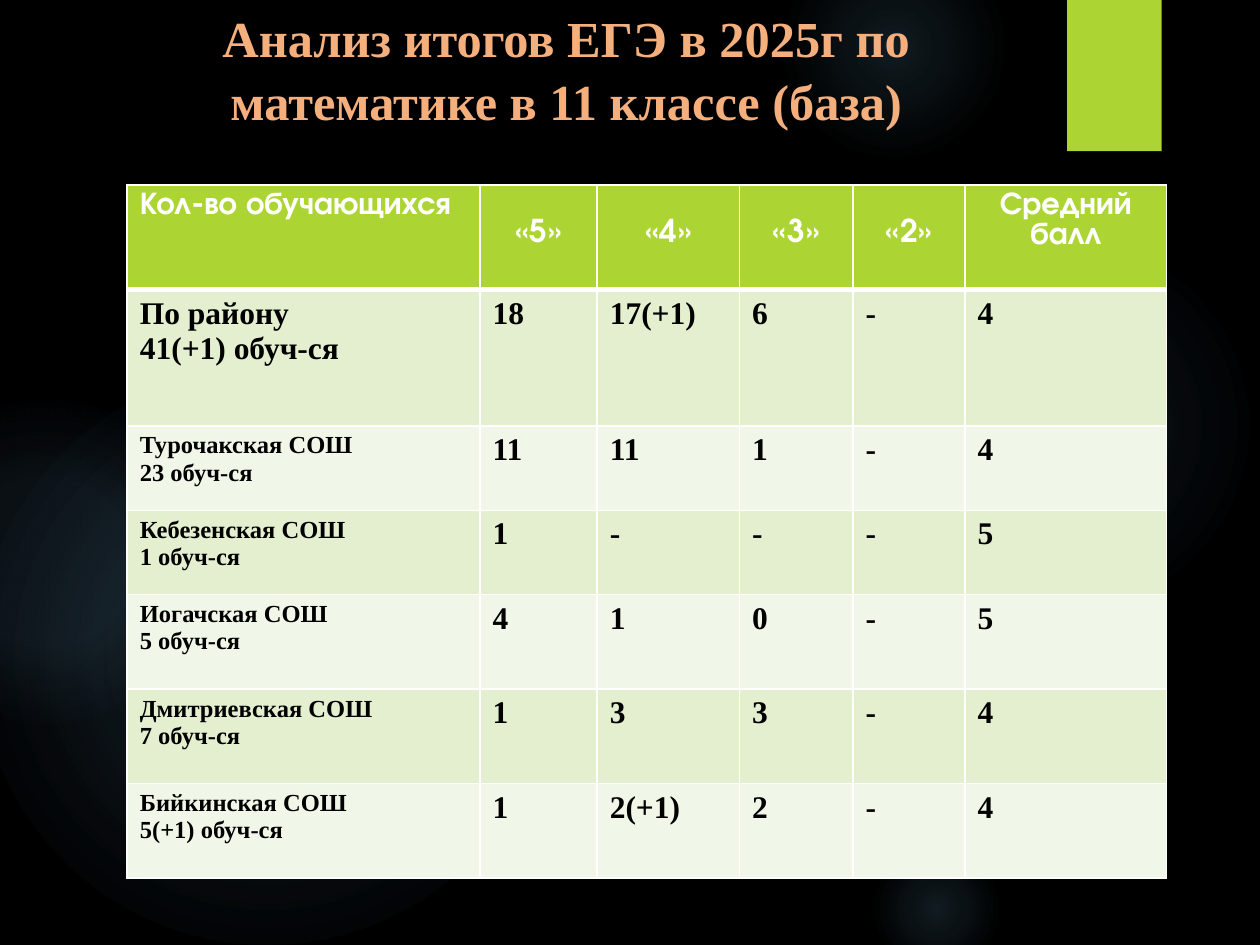
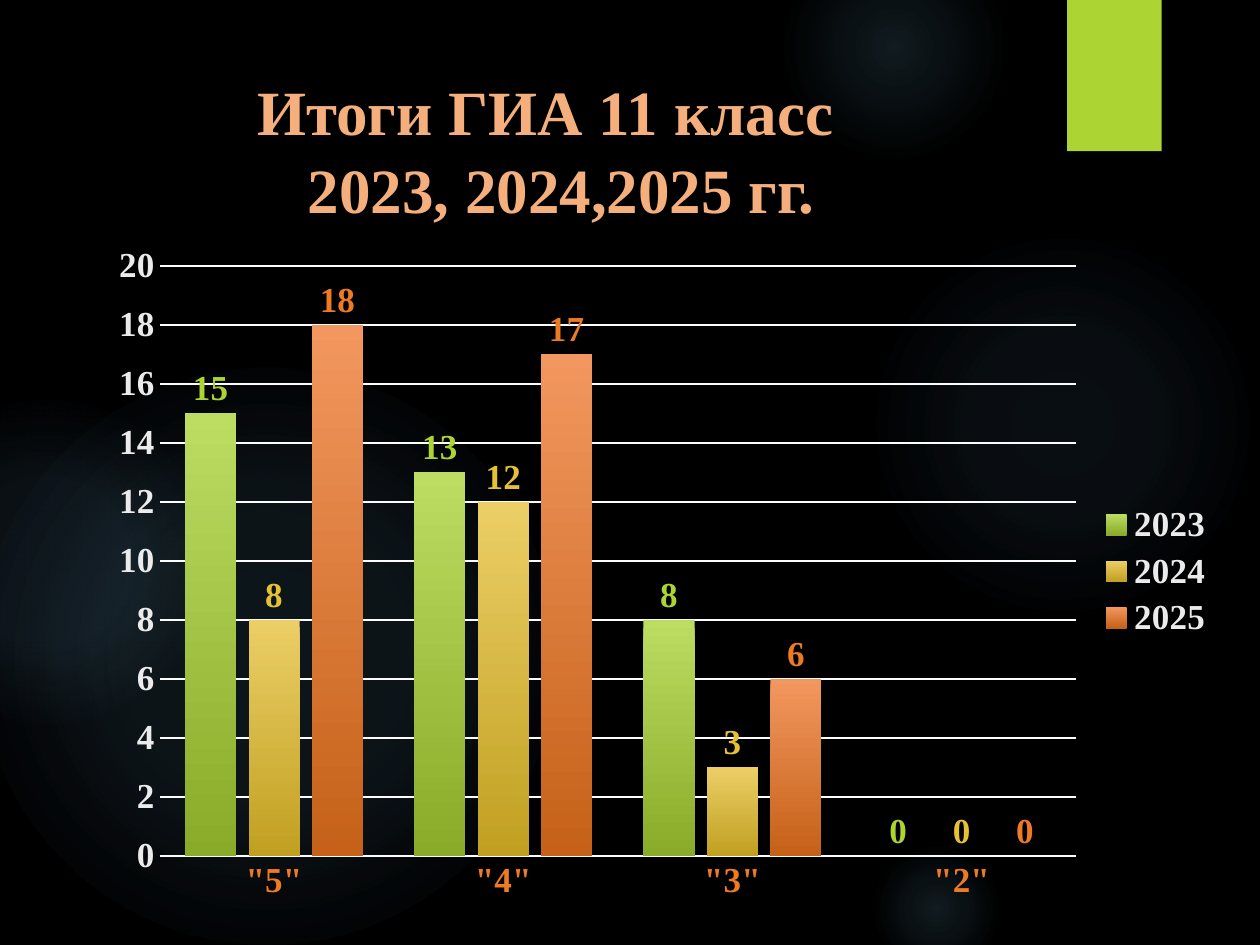
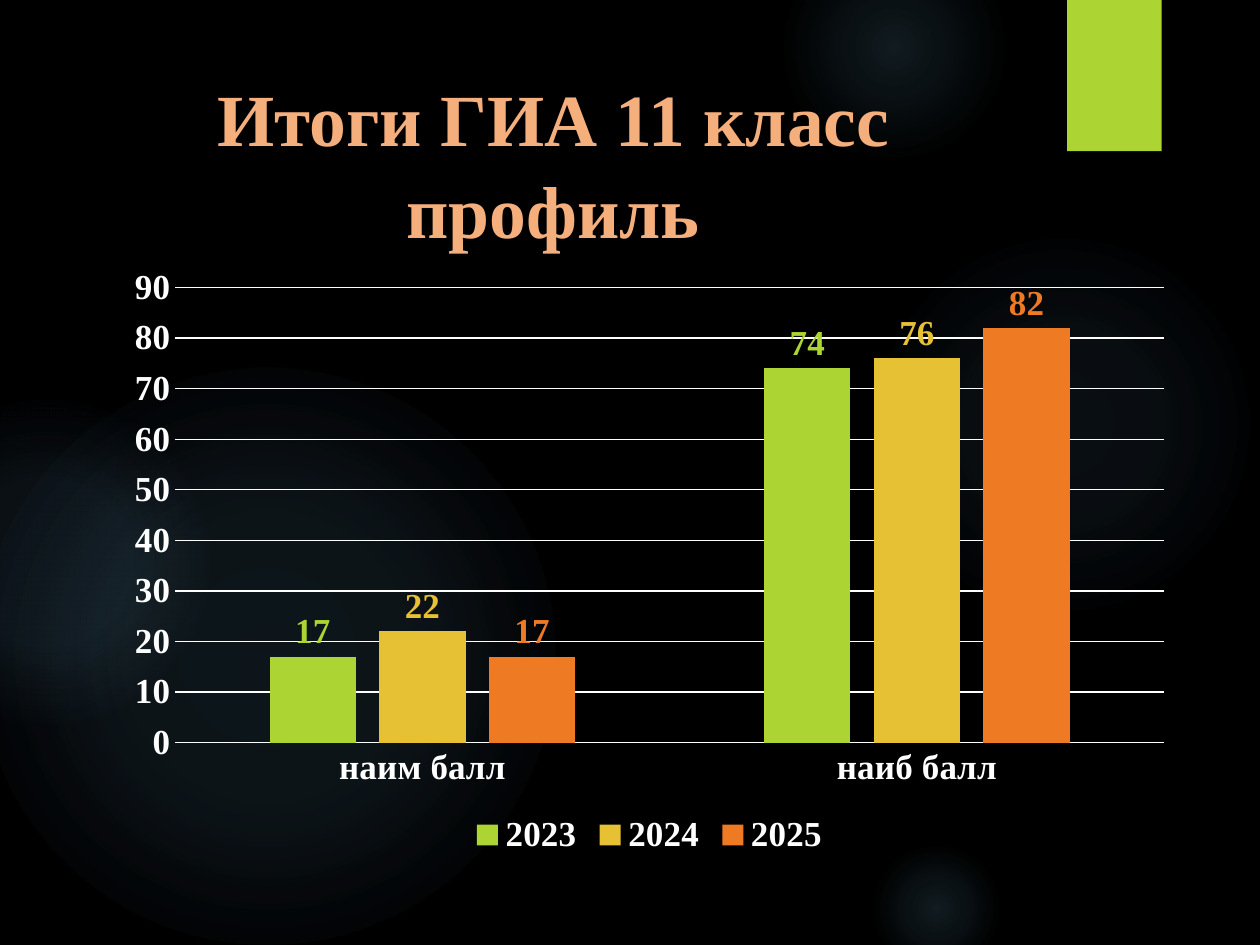
import pptx
import pptx.chart.data
import pptx.dml.color
import pptx.enum.chart
import pptx.enum.shapes
import pptx.enum.text
import pptx.oxml
import pptx.oxml.ns
import pptx.util

RGBColor = pptx.dml.color.RGBColor
BLACK = RGBColor(0x00, 0x00, 0x00)
WHITE = RGBColor(0xFF, 0xFF, 0xFF)
SOFT_WHITE = RGBColor(0xEB, 0xEB, 0xEB)
GRID_WHITE = RGBColor(0xFC, 0xFC, 0xFC)
PEACH = RGBColor(0xF5, 0xAF, 0x7C)
GLOW_BLUE = RGBColor(0x7A, 0xC4, 0xF0)
LIME = RGBColor(0xAC, 0xD4, 0x33)
GOLD = RGBColor(0xE6, 0xC1, 0x33)
ORANGE = RGBColor(0xEF, 0x7A, 0x24)
BAND_COLORS = (RGBColor(0xF1, 0xF7, 0xE8), RGBColor(0xE3, 0xEF, 0xCE))
SERIES_COLORS = (LIME, GOLD, ORANGE)
SERIES_GRADIENTS = (
    (RGBColor(0xBC, 0xDC, 0x62), RGBColor(0x8A, 0xAA, 0x29)),
    (RGBColor(0xEB, 0xCE, 0x66), RGBColor(0xC1, 0xA0, 0x21)),
    (RGBColor(0xF2, 0x97, 0x5F), RGBColor(0xC5, 0x61, 0x18)),
)

BODY_FONT = "Times New Roman"
HEADER_FONT = "TeX Gyre Adventor"
YEARS = ("2023", "2024", "2025")

SLIDE_WIDTH = pptx.util.Inches(10)
SLIDE_HEIGHT = pptx.util.Inches(7.5)
CELL = SLIDE_WIDTH / 100

GLOWS = (
    (68.9, 18.3, 30.8, ((0, 7), (36, 6), (69, 0))),
    (62.2, -5, 17.5, ((0, 14), (36, 7), (73, 0))),
    (68.9, 66.7, 10.8, ((0, 14), (36, 7), (66, 0))),
    (-1.7, 29.2, 45.8, ((0, 11), (36, 10), (75, 0))),
    (-9.2, 31.7, 25.8, ((0, 8), (36, 8), (72, 0))),
)
TITLE_BOX = (5.3, 5, 77.2, 15.3)

COLUMN_WIDTHS = (28, 9.3, 11.3, 9, 8.9, 16)
ROW_HEIGHTS = (8.3, 10.8, 6.7, 6.7, 7.5, 7.5, 7.5)
HEADER = ("Кол-во обучающихся", "«5»", "«4»", "«3»", "«2»", "Средний балл")
RESULTS = (
    ("По району\n41(+1) обуч-ся", "18", "17(+1)", "6", "-", "4"),
    ("Турочакская СОШ\n23 обуч-ся", "11", "11", "1", "-", "4"),
    ("Кебезенская СОШ\n1 обуч-ся", "1", "-", "-", "-", "5"),
    ("Иогачская СОШ\n5 обуч-ся", "4", "1", "0", "-", "5"),
    ("Дмитриевская СОШ\n7 обуч-ся", "1", "3", "3", "-", "4"),
    ("Бийкинская СОШ\n5(+1) обуч-ся", "1", "2(+1)", "2", "-", "4"),
)


def grid(*cells):
    return [pptx.util.Emu(round(cell * CELL)) for cell in cells]


def drawing_xml(tag, attributes="", content=""):
    namespace = pptx.oxml.ns.nsdecls("a")
    return pptx.oxml.parse_xml(f"<a:{tag} {namespace} {attributes}>{content}</a:{tag}>")


def format_font(font, size=20, color=WHITE, name=BODY_FONT):
    font.size = pptx.util.Pt(size)
    font.bold = True
    font.name = name
    font.color.rgb = color


def write_text(frame, text, align=None, line_spacing=None, **font_format):
    frame.text = text
    for paragraph in frame.paragraphs:
        paragraph.alignment = align
        paragraph.line_spacing = line_spacing
        for run in paragraph.runs:
            format_font(run.font, **font_format)


def add_plain_shape(slide, kind, box, color):
    shape = slide.shapes.add_shape(kind, *grid(*box))
    shape.shadow.inherit = False
    shape.fill.solid()
    shape.fill.fore_color.rgb = color
    shape.line.fill.background()
    return shape


def add_glow(slide, left, top, diameter, stops):
    shape = add_plain_shape(slide, pptx.enum.shapes.MSO_SHAPE.OVAL,
                            (left, top, diameter, diameter), GLOW_BLUE)
    stop_xml = "".join(
        f'<a:gs pos="{position * 1000}"><a:srgbClr val="{GLOW_BLUE}">'
        f'<a:alpha val="{alpha * 1000}"/></a:srgbClr></a:gs>'
        for position, alpha in stops)
    gradient = drawing_xml(
        "gradFill", 'rotWithShape="1"',
        f'<a:gsLst>{stop_xml}</a:gsLst><a:path path="circle">'
        '<a:fillToRect l="50000" t="50000" r="50000" b="50000"/></a:path>')
    solid = shape.element.spPr.find(pptx.oxml.ns.qn("a:solidFill"))
    solid.getparent().replace(solid, gradient)
    return shape


def add_tab(slide):
    tab = add_plain_shape(slide, pptx.enum.shapes.MSO_SHAPE.RECTANGLE,
                          (84.7, 0, 7.5, 12), LIME)
    effects = tab.element.spPr.find(pptx.oxml.ns.qn("a:effectLst"))
    effects.append(drawing_xml(
        "outerShdw",
        f'blurRad="{pptx.util.Pt(3)}" dist="{pptx.util.Pt(2)}" dir="5400000" rotWithShape="0"',
        f'<a:srgbClr val="{BLACK}"><a:alpha val="45000"/></a:srgbClr>'))
    return tab


def build_backdrop(presentation, slide):
    master = presentation.slide_master
    master.background.fill.solid()
    master.background.fill.fore_color.rgb = BLACK
    first_placeholder = master.shapes[0].element
    shapes = [add_glow(slide, *glow) for glow in GLOWS] + [add_tab(slide)]
    for number, shape in enumerate(shapes, start=100):
        shape.element.nvSpPr.cNvPr.set("id", str(number))
        first_placeholder.addprevious(shape.element)


def set_title(slide, text, size, box=TITLE_BOX):
    title = slide.shapes.title
    title.left, title.top, title.width, title.height = grid(*box)
    frame = title.text_frame
    frame.word_wrap = True
    frame.auto_size = pptx.enum.text.MSO_AUTO_SIZE.NONE
    frame.vertical_anchor = pptx.enum.text.MSO_ANCHOR.TOP
    write_text(frame, text, align=pptx.enum.text.PP_ALIGN.CENTER,
               line_spacing=1.04, size=size, color=PEACH)


def set_borders(cell, top=1, bottom=1):
    properties = cell._tc.get_or_add_tcPr()
    for side, width in (("L", 1), ("R", 1), ("T", top), ("B", bottom)):
        properties.append(drawing_xml(
            f"ln{side}", f'w="{pptx.util.Pt(width)}"',
            f'<a:solidFill><a:srgbClr val="{WHITE}"/></a:solidFill>'))


def fill_cell(cell, color):
    cell.fill.solid()
    cell.fill.fore_color.rgb = color


def add_results_table(slide, left, top):
    box = grid(left, top, sum(COLUMN_WIDTHS), sum(ROW_HEIGHTS))
    table = slide.shapes.add_table(len(ROW_HEIGHTS), len(COLUMN_WIDTHS), *box).table
    for column, width in zip(table.columns, grid(*COLUMN_WIDTHS)):
        column.width = width
    for row, height in zip(table.rows, grid(*ROW_HEIGHTS)):
        row.height = height
    for index, text in enumerate(HEADER):
        cell = table.cell(0, index)
        set_borders(cell, bottom=3)
        fill_cell(cell, LIME)
        if text.startswith("«"):
            cell.margin_top = pptx.util.Inches(0.27)
        align = pptx.enum.text.PP_ALIGN.CENTER if index else None
        write_text(cell.text_frame, text, align=align, size=18, name=HEADER_FONT)
    for row_index, values in enumerate(RESULTS, start=1):
        for index, text in enumerate(values):
            cell = table.cell(row_index, index)
            set_borders(cell, top=3 if row_index == 1 else 1)
            fill_cell(cell, BAND_COLORS[row_index % 2])
            is_school = index == 0 and row_index > 1
            write_text(cell.text_frame, text, size=14 if is_school else 18, color=BLACK)


def format_line(line, color):
    line.color.rgb = color
    line.width = pptx.util.Pt(0.75)


def format_axes(chart, maximum, step, text_color, category_color, line_color):
    for axis, color in ((chart.category_axis, category_color), (chart.value_axis, text_color)):
        axis.major_tick_mark = pptx.enum.chart.XL_TICK_MARK.NONE
        axis.minor_tick_mark = pptx.enum.chart.XL_TICK_MARK.NONE
        format_font(axis.tick_labels.font, color=color)
    format_line(chart.category_axis.format.line, line_color)
    value_axis = chart.value_axis
    value_axis.minimum_scale = 0
    value_axis.maximum_scale = maximum
    value_axis.major_unit = step
    value_axis.format.line.fill.background()
    value_axis.has_major_gridlines = True
    format_line(value_axis.major_gridlines.format.line, line_color)


def format_series(series, color, gradient):
    fill = series.format.fill
    if gradient:
        fill.gradient()
        fill.gradient_angle = 270
        for stop, stop_color in zip(fill.gradient_stops, gradient):
            stop.color.rgb = stop_color
    else:
        fill.solid()
        fill.fore_color.rgb = color
    labels = series.data_labels
    labels.show_value = True
    labels.position = pptx.enum.chart.XL_LABEL_POSITION.OUTSIDE_END
    format_font(labels.font, color=color)


def set_plot_layout(chart, x, y, w, h):
    plot_area = chart._chartSpace.chart.plotArea
    for layout in plot_area.findall(pptx.oxml.ns.qn("c:layout")):
        plot_area.remove(layout)
    shares = "".join(f'<c:{key} val="{value}"/>'
                     for key, value in (("x", x), ("y", y), ("w", w), ("h", h)))
    plot_area.insert(0, pptx.oxml.parse_xml(
        f'<c:layout {pptx.oxml.ns.nsdecls("c")}><c:manualLayout>'
        '<c:layoutTarget val="inner"/><c:xMode val="edge"/><c:yMode val="edge"/>'
        f'{shares}</c:manualLayout></c:layout>'))


def add_column_chart(slide, box, categories, values, legend_position, gap, overlap,
                     text_color=WHITE, gradients=(None, None, None), **axis_format):
    data = pptx.chart.data.CategoryChartData()
    data.categories = categories
    for year, year_values in zip(YEARS, values):
        data.add_series(year, year_values)
    chart = slide.shapes.add_chart(
        pptx.enum.chart.XL_CHART_TYPE.COLUMN_CLUSTERED, *grid(*box), data).chart
    chart.has_title = False
    format_font(chart.font)
    chart.has_legend = True
    chart.legend.position = legend_position
    chart.legend.include_in_layout = False
    format_font(chart.legend.font, color=text_color)
    plot = chart.plots[0]
    plot.vary_by_categories = False
    plot.gap_width = gap
    plot.overlap = overlap
    format_axes(chart, text_color=text_color, **axis_format)
    for series, color, gradient in zip(plot.series, SERIES_COLORS, gradients):
        format_series(series, color, gradient)
    return chart


def main():
    presentation = pptx.Presentation()
    presentation.slide_width = SLIDE_WIDTH
    presentation.slide_height = SLIDE_HEIGHT
    title_only = presentation.slide_layouts[5]
    table_slide, grades_slide, scores_slide = [
        presentation.slides.add_slide(title_only) for _ in range(3)]
    build_backdrop(presentation, table_slide)
    legend_positions = pptx.enum.chart.XL_LEGEND_POSITION

    set_title(table_slide, "Анализ итогов ЕГЭ в 2025г по математике в 11 классе (база)",
              28.8, box=(9.8, -0.1, 70.3, 10.2))
    add_results_table(table_slide, 10.1, 14.7)

    set_title(grades_slide, "Итоги ГИА 11 класс \n 2023, 2024,2025 гг.", 36)
    grades_chart = add_column_chart(
        grades_slide, (5.3, 17.8, 92.1, 55.1), ('"5"', '"4"', '"3"', '"2"'),
        ((15, 13, 8, 0), (8, 12, 3, 0), (18, 17, 6, 0)),
        legend_positions.RIGHT, gap=100, overlap=-24, text_color=SOFT_WHITE,
        gradients=SERIES_GRADIENTS, maximum=20, step=2,
        category_color=ORANGE, line_color=GRID_WHITE)
    set_plot_layout(grades_chart, 0.08, 0.06, 0.79, 0.85)

    set_title(scores_slide, "Итоги ГИА 11 класс профиль", 42)
    add_column_chart(
        scores_slide, (9, 20.3, 85.1, 48.1), ("наим балл", "наиб балл"),
        ((17, 74), (22, 76), (17, 82)),
        legend_positions.BOTTOM, gap=219, overlap=-27, maximum=90, step=10,
        category_color=WHITE, line_color=WHITE)

    presentation.save("out.pptx")


if __name__ == "__main__":
    main()
